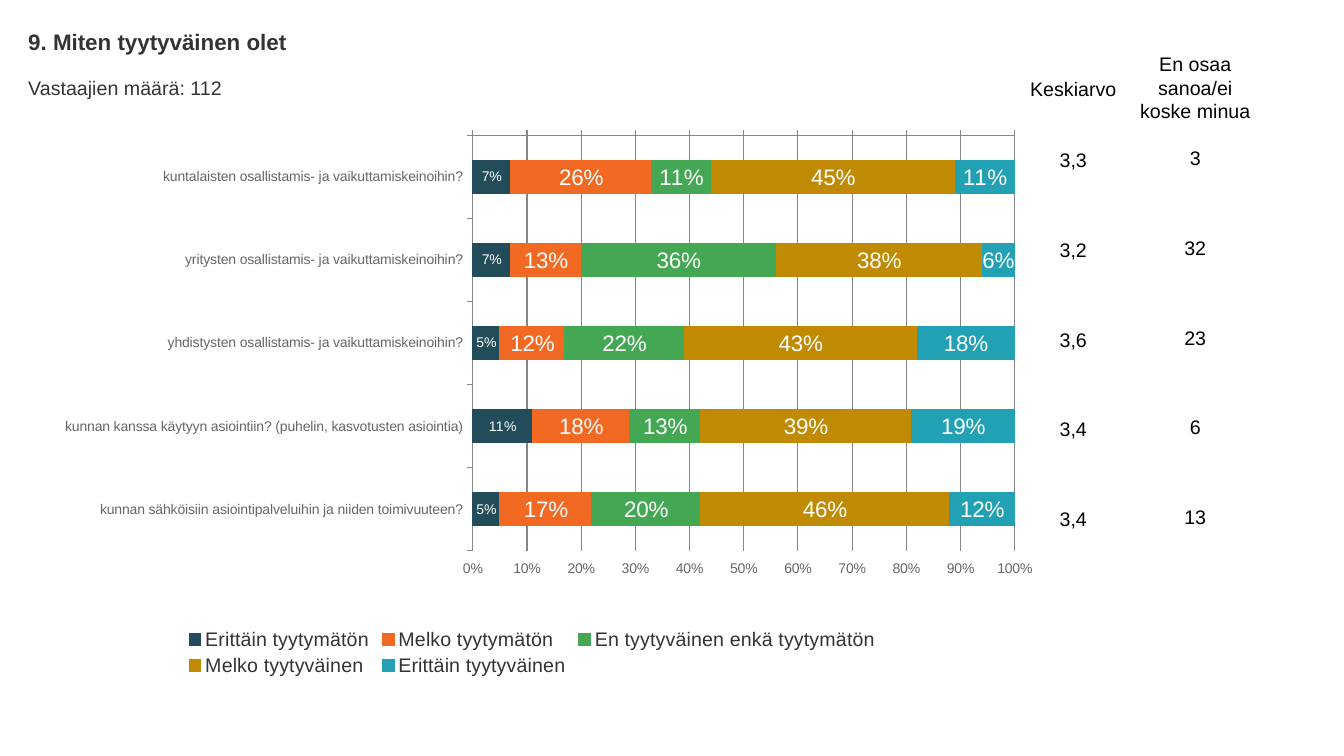
from dataclasses import dataclass

import lxml.etree
import pptx
import pptx.chart.data
import pptx.dml.color
import pptx.enum.chart
import pptx.enum.text
import pptx.oxml.ns
import pptx.util

RGBColor = pptx.dml.color.RGBColor
PX = 9144  # EMU per px, 100 px to the inch

BLACK = RGBColor(0x00, 0x00, 0x00)
WHITE = RGBColor(0xFF, 0xFF, 0xFF)
DARK_GREY = RGBColor(0x33, 0x33, 0x33)
AXIS_TEXT = RGBColor(0x66, 0x66, 0x66)
AXIS_LINE = RGBColor(0x86, 0x86, 0x86)
NAVY = RGBColor(0x23, 0x4C, 0x5A)
ORANGE = RGBColor(0xF2, 0x69, 0x23)
GREEN = RGBColor(0x44, 0xA7, 0x53)
OCHRE = RGBColor(0xC0, 0x8A, 0x02)
TEAL = RGBColor(0x22, 0xA1, 0xB4)


@dataclass
class Answer:
    name: str
    values: list[float]
    color: RGBColor
    label_size: int = 16


@dataclass
class Column:
    heading: str
    values: list[str]
    left: int
    heading_top: int
    first_top: int


QUESTIONS = [
    "kuntalaisten osallistamis- ja vaikuttamiskeinoihin?",
    "yritysten osallistamis- ja vaikuttamiskeinoihin?",
    "yhdistysten osallistamis- ja vaikuttamiskeinoihin?",
    "kunnan kanssa käytyyn asiointiin? (puhelin, kasvotusten asiointia)",
    "kunnan sähköisiin asiointipalveluihin ja niiden toimivuuteen?",
]
ANSWERS = [
    Answer("Erittäin tyytymätön", [0.07, 0.07, 0.05, 0.11, 0.05], NAVY, 10),
    Answer("Melko tyytymätön", [0.26, 0.13, 0.12, 0.18, 0.17], ORANGE),
    Answer("En tyytyväinen enkä tyytymätön", [0.11, 0.36, 0.22, 0.13, 0.2], GREEN),
    Answer("Melko tyytyväinen", [0.45, 0.38, 0.43, 0.39, 0.46], OCHRE),
    Answer("Erittäin tyytyväinen", [0.11, 0.06, 0.18, 0.19, 0.12], TEAL),
]
COLUMNS = [
    Column("En osaa sanoa/ei koske minua", ["3", "32", "23", "6", "13"], 1116, 74, 112),
    Column("Keskiarvo", ["3,3", "3,2", "3,6", "3,4", "3,4"], 995, 75, 114),
]
COLUMN_WIDTH = 139
HEADING_HEIGHT = 25
ROW_HEIGHT = 89

PLOT_LAYOUT = {"layoutTarget": "inner", "xMode": "edge", "yMode": "edge",
               "x": "0.442", "y": "0.028", "w": "0.528", "h": "0.741"}


def style_font(font, size: int, color: RGBColor, name: str = "Arial", bold: bool = False) -> None:
    font.size = pptx.util.Pt(size)
    font.name = name
    font.bold = bold
    font.color.rgb = color


def style_line(line, color: RGBColor) -> None:
    line.color.rgb = color
    line.width = pptx.util.Pt(0.75)


def add_text(slide, text: str, left: int, top: int, width: int, height: int):
    """Add a wrapping text box and return its frame, paragraph and run."""
    sp = slide.shapes.add_textbox(left * PX, top * PX, width * PX, height * PX)
    tf = sp.text_frame
    tf.word_wrap = True
    p = tf.paragraphs[0]
    r = p.add_run()
    r.text = text
    return tf, p, r


def add_title(slide, text: str, top: int, height: int, size: int, bold: bool) -> None:
    tf, _, r = add_text(slide, text, 28, top, 1278, height)
    tf.margin_left = tf.margin_top = tf.margin_right = tf.margin_bottom = 0
    tf.auto_size = pptx.enum.text.MSO_AUTO_SIZE.SHAPE_TO_FIT_TEXT
    style_font(r.font, size, DARK_GREY, bold=bold)


def add_cell(slide, text: str, left: int, top: int, height: int) -> None:
    tf, p, r = add_text(slide, text, left, top, COLUMN_WIDTH, height)
    tf.vertical_anchor = pptx.enum.text.MSO_ANCHOR.MIDDLE
    p.alignment = pptx.enum.text.PP_ALIGN.CENTER
    style_font(r.font, 14, BLACK)


def add_column(slide, column: Column) -> None:
    add_cell(slide, column.heading, column.left, column.heading_top, HEADING_HEIGHT)
    for i, value in enumerate(column.values):
        add_cell(slide, value, column.left, column.first_top + i * ROW_HEIGHT, ROW_HEIGHT)


def set_plot_layout(chart) -> None:
    """Fix the inner plot area, which python-pptx cannot place itself."""
    qn = pptx.oxml.ns.qn
    plot_area = chart.element.find(".//" + qn("c:plotArea"))
    layout = plot_area.find(qn("c:layout"))
    if layout is None:
        layout = lxml.etree.SubElement(plot_area, qn("c:layout"))
        plot_area.insert(0, layout)
    manual = lxml.etree.SubElement(layout, qn("c:manualLayout"))
    for tag, value in PLOT_LAYOUT.items():
        lxml.etree.SubElement(manual, qn("c:" + tag)).set("val", value)


def style_axes(chart) -> None:
    category_axis, value_axis = chart.category_axis, chart.value_axis
    label_position = pptx.enum.chart.XL_TICK_LABEL_POSITION
    for axis in (category_axis, value_axis):
        axis.major_tick_mark = pptx.enum.chart.XL_TICK_MARK.OUTSIDE
        axis.minor_tick_mark = pptx.enum.chart.XL_TICK_MARK.NONE
        style_font(axis.tick_labels.font, 10, AXIS_TEXT)
        style_line(axis.format.line, AXIS_LINE)
    category_axis.reverse_order = True
    category_axis.tick_label_position = label_position.LOW
    value_axis.tick_label_position = label_position.HIGH
    value_axis.minimum_scale = 0
    value_axis.maximum_scale = 1
    value_axis.major_unit = 0.1
    value_axis.tick_labels.number_format = "0%"
    value_axis.tick_labels.number_format_is_linked = False
    value_axis.has_major_gridlines = True
    style_line(value_axis.major_gridlines.format.line, AXIS_LINE)


def add_answer_chart(slide) -> None:
    data = pptx.chart.data.CategoryChartData(number_format="0%")
    data.categories = QUESTIONS
    for answer in ANSWERS:
        data.add_series(answer.name, answer.values)
    chart = slide.shapes.add_chart(
        pptx.enum.chart.XL_CHART_TYPE.BAR_STACKED,
        19 * PX, 119 * PX, 1018 * PX, 556 * PX, data).chart
    style_font(chart.font, 14, BLACK, "Calibri")
    chart.has_title = False
    chart.has_legend = True
    chart.legend.position = pptx.enum.chart.XL_LEGEND_POSITION.BOTTOM
    chart.legend.include_in_layout = False
    style_font(chart.legend.font, 14, DARK_GREY)
    set_plot_layout(chart)
    style_axes(chart)

    plot = chart.plots[0]
    plot.gap_width = 150
    plot.overlap = 100
    plot.vary_by_categories = False
    for series, answer in zip(plot.series, ANSWERS):
        series.format.fill.solid()
        series.format.fill.fore_color.rgb = answer.color
        style_line(series.format.line, answer.color)
        labels = series.data_labels
        labels.show_value = True
        labels.number_format = "0%"
        labels.number_format_is_linked = False
        style_font(labels.font, answer.label_size, WHITE)


def main() -> None:
    prs = pptx.Presentation()
    prs.slide_width = 1333 * PX
    prs.slide_height = 750 * PX
    slide = prs.slides.add_slide(prs.slide_layouts[6])
    add_title(slide, "9. Miten tyytyväinen olet", 28, 27, 16, True)
    add_title(slide, "Vastaajien määrä: 112", 75, 23, 14, False)
    add_answer_chart(slide)
    for column in COLUMNS:
        add_column(slide, column)
    prs.save("out.pptx")


if __name__ == "__main__":
    main()
